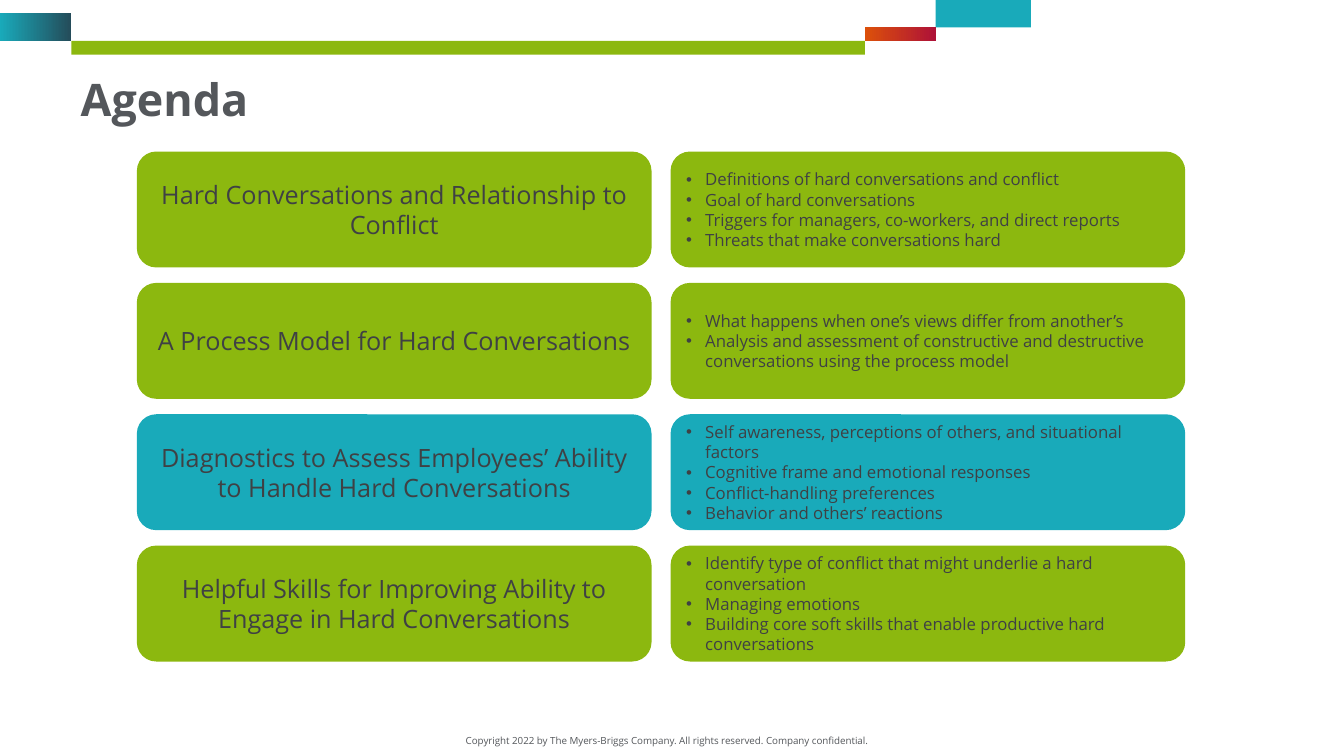
from lxml import etree
from pptx import Presentation, util as u
from pptx.dml.color import RGBColor
from pptx.enum import shapes, text
from pptx.oxml.ns import qn

GREEN, TEAL, GREY, INK = "8CB80F", "19AABA", "54575B", "3F4144"

AGENDA = [
    (GREEN, "Hard Conversations and Relationship to Conflict", [
        "Definitions of hard conversations and conflict",
        "Goal of hard conversations",
        "Triggers for managers, co-workers, and direct reports",
        "Threats that make conversations hard"]),
    (GREEN, "A Process Model for Hard Conversations", [
        "What happens when one’s views differ from another’s",
        "Analysis and assessment of constructive and destructive "
        "conversations using the process model"]),
    (TEAL, "Diagnostics to Assess Employees’ Ability to Handle Hard Conversations", [
        "Self awareness, perceptions of others, and situational factors",
        "Cognitive frame and emotional responses",
        "Conflict-handling preferences",
        "Behavior and others’ reactions"]),
    (GREEN, "Helpful Skills for Improving Ability to Engage in Hard Conversations", [
        "Identify type of conflict that might underlie a hard conversation",
        "Managing emotions",
        "Building core soft skills that enable productive hard conversations"]),
]


def rgb(value):
    return RGBColor.from_string(value)


class Deck:
    """Draws styled elements on the current slide, with lengths in centimetres."""

    font = "Open Sans"

    def __init__(self, slide):
        self.s = slide

    def add_words(self, p, words, size, color, bold=False):
        r = p.add_run()
        r.text = words
        r.font.name, r.font.size, r.font.bold = self.font, u.Pt(size), bold
        r.font.color.rgb = rgb(color)

    def title(self, words, x, y, w, h):
        sp = self.s.shapes.title
        sp.left, sp.top, sp.width, sp.height = map(u.Cm, (x, y, w, h))
        tf = sp.text_frame
        tf.auto_size = text.MSO_AUTO_SIZE.NONE
        tf.vertical_anchor = text.MSO_ANCHOR.TOP
        p = tf.paragraphs[0]
        p.alignment = text.PP_ALIGN.LEFT
        p.line_spacing = 0.9
        self.add_words(p, words, 32, GREY, True)

    def block(self, x, y, w, h, *colors, kind=shapes.MSO_SHAPE.RECTANGLE):
        sp = self.s.shapes.add_shape(kind, *map(u.Cm, (x, y, w, h)))
        sp.shadow.inherit = False
        sp.line.fill.background()
        if len(colors) == 1:
            sp.fill.solid()
            sp.fill.fore_color.rgb = rgb(colors[0])
        else:
            sp.fill.gradient()
            sp.fill.gradient_angle = 0
            for stop, color in zip(sp.fill.gradient_stops, colors):
                stop.color.rgb = rgb(color)
        return sp

    def card(self, x, y, w, h, color, lines, size, bullets=False):
        sp = self.block(x, y, w, h, color, kind=shapes.MSO_SHAPE.ROUNDED_RECTANGLE)
        tf = sp.text_frame
        tf.word_wrap = True
        tf.vertical_anchor = text.MSO_ANCHOR.MIDDLE
        for i, line in enumerate(lines):
            p = tf.add_paragraph() if i else tf.paragraphs[0]
            p.alignment = text.PP_ALIGN.LEFT if bullets else text.PP_ALIGN.CENTER
            if bullets:
                self.bullet(p)
            self.add_words(p, line, size, INK)

    def bullet(self, p):
        indent = u.Cm(0.48)
        pPr = p._p.get_or_add_pPr()
        pPr.set("marL", str(indent))
        pPr.set("indent", str(-indent))
        etree.SubElement(pPr, qn("a:buFont")).set("typeface", "Arial")
        etree.SubElement(pPr, qn("a:buChar")).set("char", "•")

    def label(self, words, x, y, w, h, size, color):
        tf = self.s.shapes.add_textbox(*map(u.Cm, (x, y, w, h))).text_frame
        tf.word_wrap = True
        p = tf.paragraphs[0]
        p.alignment = text.PP_ALIGN.CENTER
        self.add_words(p, words, size, color)


def main():
    prs = Presentation()
    prs.slide_width, prs.slide_height = u.Cm(33.87), u.Cm(19.05)
    deck = Deck(prs.slides.add_slide(prs.slide_layouts[5]))

    deck.block(1.8, 1.03, 20, 0.35, GREEN)
    deck.block(0, 0.33, 1.8, 0.71, TEAL, "244C5A")
    deck.block(23.58, 0, 2.4, 0.69, TEAL)
    deck.block(21.8, 0.69, 1.78, 0.35, "DC500A", "AE1237")
    deck.title("Agenda", 1.78, 1.83, 28.7, 2.51)

    left, top, width, height = 3.45, 3.82, 12.97, 2.92
    column_pitch, row_pitch = 13.45, 3.31
    for row, (color, topic, points) in enumerate(AGENDA):
        y = top + row * row_pitch
        deck.card(left, y, width, height, color, [topic], 18)
        deck.card(left + column_pitch, y, width, height, color, points, 12, True)

    deck.label("Copyright 2022 by The Myers-Briggs Company. All rights reserved. "
               "Company confidential.", 11.33, 18.39, 10.95, 0.56, 7, GREY)
    prs.save("out.pptx")


if __name__ == "__main__":
    main()
